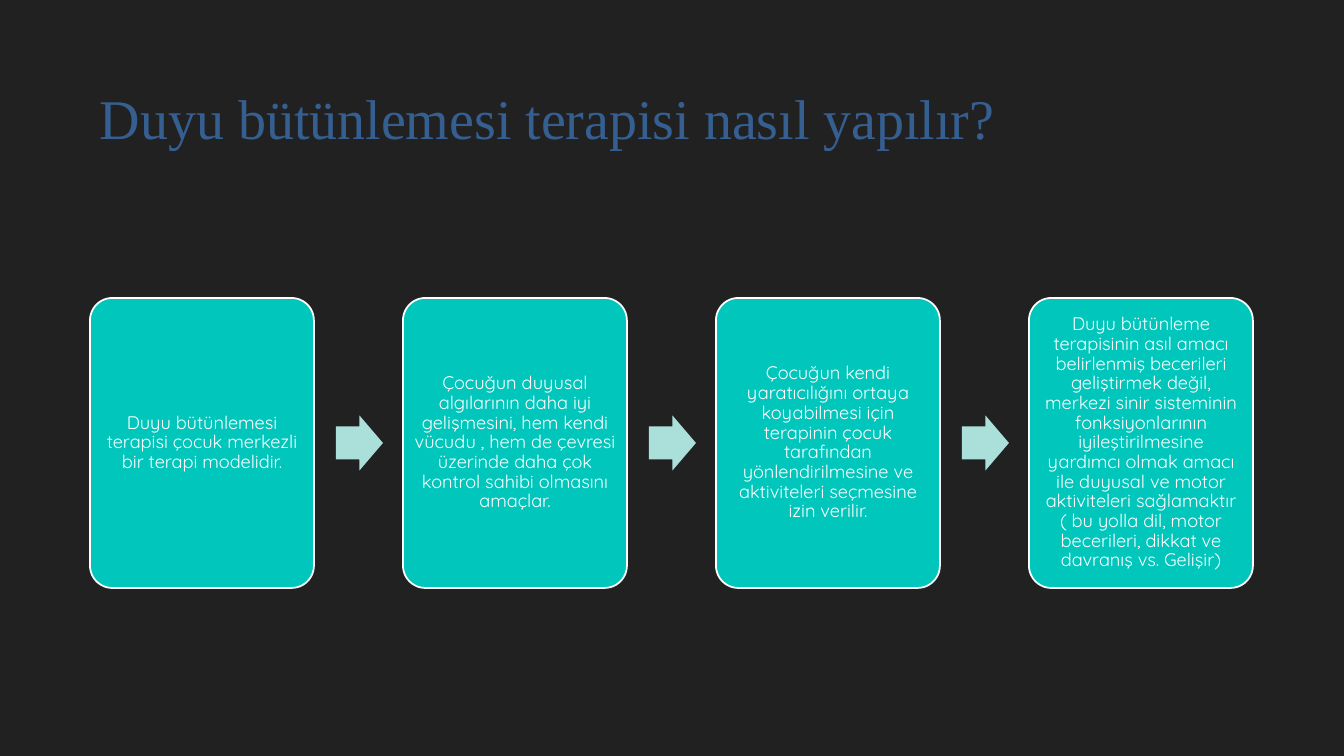
from pptx import Presentation, util as u
from pptx.dml.color import RGBColor
from pptx.enum import shapes, text
from pptx.oxml import parse_xml
from pptx.oxml.ns import nsdecls

# Content
TITLE = "Duyu bütünlemesi terapisi nasıl yapılır?"
STEPS = [
    "Duyu bütünlemesi terapisi çocuk merkezli bir terapi modelidir.",
    "Çocuğun duyusal algılarının daha iyi gelişmesini, hem kendi vücudu , "
    "hem de çevresi üzerinde daha çok kontrol sahibi olmasını amaçlar.",
    "Çocuğun kendi yaratıcılığını ortaya koyabilmesi için terapinin çocuk "
    "tarafından yönlendirilmesine ve aktiviteleri seçmesine izin verilir.",
    "Duyu bütünleme terapisinin asıl amacı belirlenmiş becerileri geliştirmek "
    "değil, merkezi sinir sisteminin fonksiyonlarının iyileştirilmesine "
    "yardımcı olmak amacı ile duyusal ve motor aktiviteleri sağlamaktır "
    "( bu yolla dil, motor becerileri, dikkat ve davranış vs. Gelişir)",
]

# Theme
THEME = {
    "back": "212121", "card": "00C6BB", "edge": "FFFFFF", "arrow": "ABDFDA",
    "title": {"name": "Times New Roman", "size": 40, "color": "365F91"},
    "body": {"name": "Quicksand", "size": 13, "color": "FFFFFF"},
}

# Layout in px
WIDE, HIGH = 1344, 756
HEAD = (90, 49, 1165, 107)
LEFT, TOP, CARD_W, CARD_H = 90, 298, 224, 290
PITCH = 313
ARROW_W, ARROW_H, ARROW_GAP = 47, 55, 22
PAD = 5


def px(n):
    return u.Emu(round(n * 914400 / 100.8))


def rgb(code):
    return RGBColor.from_string(code)


def write(frame, words, style, frame_fmt, para_fmt):
    for key, val in frame_fmt.items():
        setattr(frame, key, val)
    para = frame.paragraphs[0]
    for key, val in para_fmt.items():
        setattr(para, key, val)
    run = para.add_run()
    run.text = words
    run.font.name = style["name"]
    run.font.size = u.Pt(style["size"])
    run.font.color.rgb = rgb(style["color"])
    return run


def block(slide, kind, box, fill, adjust, edge=None):
    item = slide.shapes.add_shape(kind, *map(px, box))
    item.shadow.inherit = False
    item.fill.solid()
    item.fill.fore_color.rgb = rgb(fill)
    for i, val in enumerate(adjust):
        item.adjustments[i] = val
    if edge:
        item.line.color.rgb = rgb(edge)
        item.line.width = u.Pt(1.25)
    else:
        item.line.fill.background()
    return item


def add_title(slide):
    box = slide.shapes.add_textbox(*map(px, HEAD))
    run = write(box.text_frame, TITLE, THEME["title"],
                {"word_wrap": True, "vertical_anchor": text.MSO_ANCHOR.BOTTOM},
                {"alignment": text.PP_ALIGN.LEFT})
    # Soft shadow behind the letters
    glow = parse_xml(
        f'<a:effectLst {nsdecls("a")}>'
        '<a:outerShdw blurRad="38100" dist="25400" dir="5400000">'
        '<a:srgbClr val="000000"><a:alpha val="60000"/></a:srgbClr>'
        '</a:outerShdw></a:effectLst>')
    run.font.fill._xPr.find(
        "{http://schemas.openxmlformats.org/drawingml/2006/main}solidFill"
    ).addnext(glow)


def add_steps(slide):
    pads = {f"margin_{side}": px(PAD)
            for side in ("left", "top", "right", "bottom")}
    frame_fmt = {"word_wrap": True,
                 "vertical_anchor": text.MSO_ANCHOR.MIDDLE, **pads}
    para_fmt = {"alignment": text.PP_ALIGN.CENTER, "line_spacing": 0.9}
    kinds = shapes.MSO_SHAPE
    for i, words in enumerate(STEPS):
        # Card
        x = LEFT + i * PITCH
        card = block(slide, kinds.ROUNDED_RECTANGLE, (x, TOP, CARD_W, CARD_H),
                     THEME["card"], [0.1], THEME["edge"])
        write(card.text_frame, words, THEME["body"], frame_fmt, para_fmt)
        # Arrow to the next card
        if i < len(STEPS) - 1:
            spot = (x + CARD_W + ARROW_GAP, TOP + (CARD_H - ARROW_H) / 2,
                    ARROW_W, ARROW_H)
            block(slide, kinds.RIGHT_ARROW, spot, THEME["arrow"], [0.6, 0.5])


def main():
    deck = Presentation()
    deck.slide_width, deck.slide_height = px(WIDE), px(HIGH)
    slide = deck.slides.add_slide(deck.slide_layouts[6])
    slide.background.fill.solid()
    slide.background.fill.fore_color.rgb = rgb(THEME["back"])
    add_title(slide)
    add_steps(slide)
    deck.save("out.pptx")


if __name__ == "__main__":
    main()
